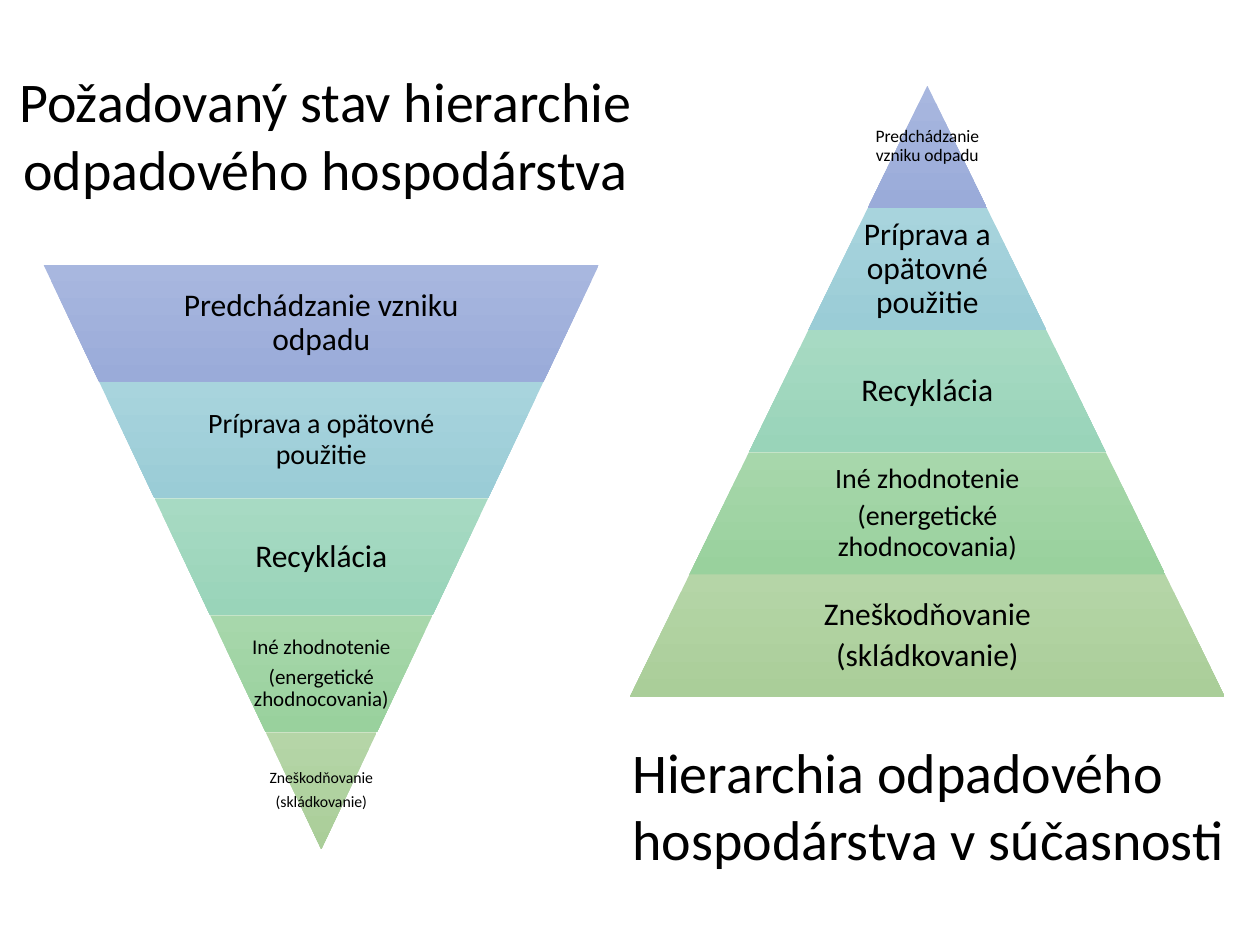
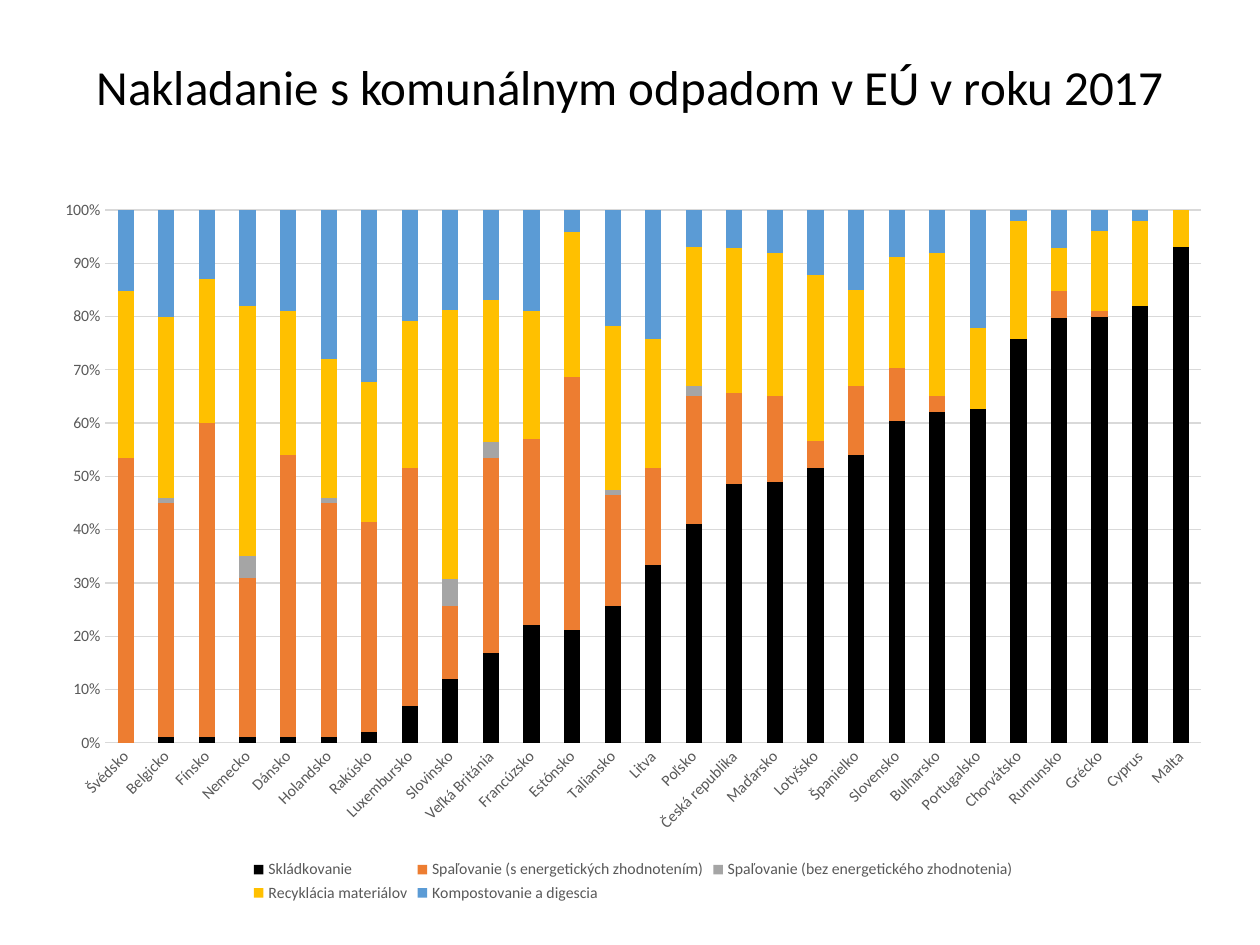
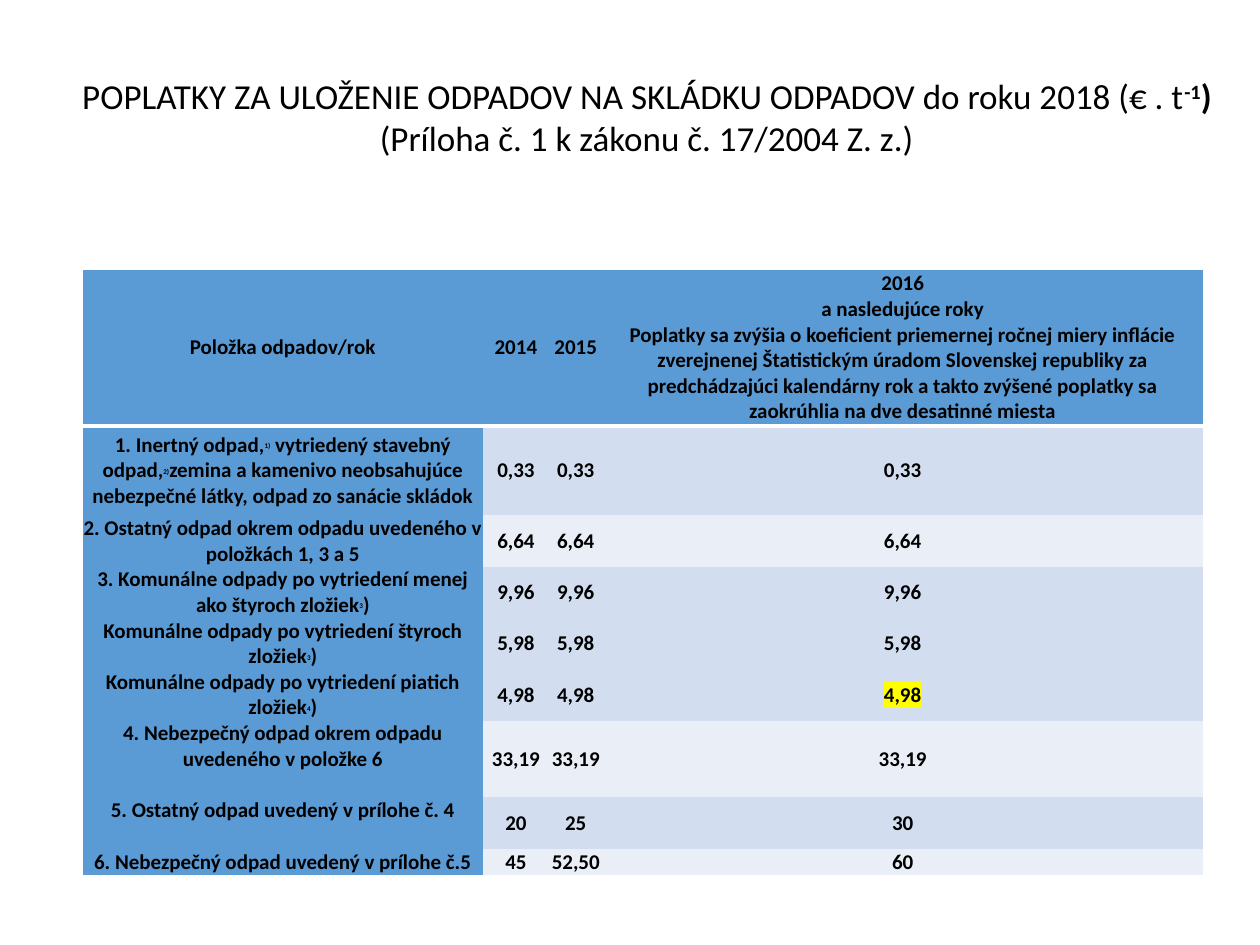
from lxml import etree
from pptx import Presentation
from pptx.chart.data import CategoryChartData
from pptx.dml.color import RGBColor
from pptx.enum.chart import XL_CHART_TYPE as CT, XL_LEGEND_POSITION as LP, XL_TICK_MARK as TM
from pptx.enum.text import MSO_ANCHOR as MA, MSO_AUTO_SIZE as AS, PP_ALIGN as PA
from pptx.oxml.ns import qn
from pptx.util import Inches, Pt

FONT = "Calibri"
BLACK, WHITE, GREY, GRID, BLUE = "000000", "FFFFFF", "595959", "D9D9D9", "5B9BD5"
ROW_FILLS = ["D2DEEF", "EAEFF7"]
NO_GRID_STYLE = "{2D5ABB26-0587-4C30-8999-92F81FD0307C}"

LEVELS = [
    ("Predchádzanie vzniku odpadu", "A8B7DF", "9AABD9"),
    ("Príprava a opätovné použitie", "A8D4DD", "9ACCD6"),
    ("Recyklácia", "A7DAC3", "99D4B9"),
    ("Iné zhodnotenie\n(energetické zhodnocovania)", "A7D7AB", "99D19D"),
    ("Zneškodňovanie\n(skládkovanie)", "B5D5A7", "AACE99"),
]

COUNTRIES = [
    "Švédsko", "Belgicko", "Fínsko", "Nemecko", "Dánsko", "Holandsko", "Rakúsko",
    "Luxembursko", "Slovinsko", "Veľká Británia", "Francúzsko", "Estónsko", "Taliansko",
    "Litva", "Poľsko", "Česká republika", "Maďarsko", "Lotyšsko", "Španielko", "Slovensko",
    "Bulharsko", "Portugalsko", "Chorvátsko", "Rumunsko", "Grécko", "Cyprus", "Malta",
]
TREATMENTS = [
    ("Skládkovanie", BLACK,
     [0, 1, 1, 1, 1, 1, 2, 7, 12, 17, 22, 21, 26, 33, 41, 48, 49, 51, 54, 61, 62, 62, 75, 79,
      80, 82, 93]),
    ("Spaľovanie (s energetických zhodnotením)", "ED7D31",
     [53, 44, 59, 30, 53, 44, 39, 45, 14, 37, 35, 47, 21, 18, 24, 17, 16, 5, 13, 10, 3, 0, 0,
      5, 1, 0, 0]),
    ("Spaľovanie (bez energetického zhodnotenia)", "A5A5A5",
     [0, 1, 0, 4, 0, 1, 0, 0, 5, 3, 0, 0, 1, 0, 2, 0, 0, 0, 0, 0, 0, 0, 0, 0, 0, 0, 0]),
    ("Recyklácia materiálov", "FFC000",
     [31, 34, 27, 47, 27, 26, 26, 28, 51, 27, 24, 27, 31, 24, 26, 27, 27, 31, 18, 21, 27, 15,
      22, 8, 15, 16, 7]),
    ("Kompostovanie a digescia", BLUE,
     [15, 20, 13, 18, 19, 28, 32, 21, 19, 17, 19, 4, 22, 24, 7, 7, 8, 12, 15, 9, 8, 22, 2, 7,
      4, 2, 0]),
]

COL_WIDTHS = [3.17, 0.53, 0.42, 4.77]
ROW_HEIGHTS = [1.24, 0.71, 0.41, 1.22, 0.61, 0.41, 0.2]
FEES = [
    ("Položka odpadov/rok", "2014", "2015",
     "2016\na nasledujúce roky\nPoplatky sa zvýšia o koeficient priemernej ročnej miery "
     "inflácie zverejnenej Štatistickým úradom Slovenskej republiky za predchádzajúci "
     "kalendárny rok a takto zvýšené poplatky sa zaokrúhlia na dve desatinné miesta"),
    ("1. Inertný odpad,^1)^ vytriedený stavebný odpad,^2)^zemina a kamenivo neobsahujúce "
     "nebezpečné látky, odpad zo sanácie skládok", "0,33", "0,33", "0,33"),
    ("2. Ostatný odpad okrem odpadu uvedeného v položkách 1, 3 a 5", "6,64", "6,64", "6,64"),
    ("3. Komunálne odpady po vytriedení menej ako štyroch zložiek^3^)\n"
     "Komunálne odpady po vytriedení štyroch zložiek^3^)\n"
     "Komunálne odpady po vytriedení piatich zložiek^4^)",
     *["9,96\n5,98\n4,98"] * 3),
    ("4. Nebezpečný odpad okrem odpadu uvedeného v položke 6", "33,19", "33,19", "33,19"),
    ("5. Ostatný odpad uvedený v prílohe č. 4", "20", "25", "30"),
    ("6. Nebezpečný odpad uvedený v prílohe č.5", "45", "52,50", "60"),
]
TOP_ALIGNED_ROWS = (4, 5)


def rgb(color):
    """Return the colour for a hex string."""
    return RGBColor.from_string(color)


def set_font(font, size, color=BLACK, bold=False):
    """Format a font."""
    font.name, font.size, font.bold = FONT, Pt(size), bold
    font.color.rgb = rgb(color)


def add_run(p, text, size, color=BLACK, bold=False, raised=False):
    """Add a formatted run to a paragraph."""
    r = p.add_run()
    r.text = text
    set_font(r.font, size, color, bold)
    if raised:
        r.font._element.set("baseline", "30000")
    return r


def write(tf, text, size, align=PA.CENTER, bold=False, raised_size=7, spacing=None,
          before=0, after=0):
    """Write lines as paragraphs, raising the parts between carets."""
    tf.word_wrap = True
    for i, line in enumerate(text.split("\n")):
        p = tf.add_paragraph() if i else tf.paragraphs[0]
        p.alignment, p.line_spacing = align, spacing
        p.space_before, p.space_after = Pt(before if i else 0), Pt(after)
        for j, part in enumerate(line.split("^")):
            raised = j % 2 == 1
            add_run(p, part, raised_size if raised else size, bold=bold, raised=raised)


def set_margins(obj, x, y):
    """Set the side and the top and bottom margins of a frame or cell."""
    obj.margin_left = obj.margin_right = Inches(x)
    obj.margin_top = obj.margin_bottom = Inches(y)


def add_slide(prs, title, box, size):
    """Add a title-only slide with its title placed and formatted."""
    s = prs.slides.add_slide(prs.slide_layouts[5])
    sp = s.shapes.title
    sp.left, sp.top, sp.width, sp.height = map(Inches, box)
    tf = sp.text_frame
    tf.auto_size, tf.vertical_anchor = AS.NONE, MA.MIDDLE
    write(tf, title, size)
    return s


def add_band(s, center, top, height, top_width, bottom_width, level, size):
    """Add one trapezoid band of a pyramid with its text."""
    text, light, dark = level
    points = [(center + dx, y) for dx, y in (
        (top_width / 2, top), (bottom_width / 2, top + height),
        (-bottom_width / 2, top + height), (-top_width / 2, top))]
    corners = [(Inches(x), Inches(y)) for x, y in points]
    builder = s.shapes.build_freeform(*corners[0])
    builder.add_line_segments(corners[1:], close=True)
    sp = builder.convert_to_shape()
    sp.shadow.inherit = False
    sp.line.fill.background()
    sp.fill.gradient()
    sp.fill.gradient_angle = 270
    for stop, color in zip(sp.fill.gradient_stops, (light, dark)):
        stop.color.rgb = rgb(color)
    tf = sp.text_frame
    tf.vertical_anchor = MA.MIDDLE
    is_tip = min(top_width, bottom_width) == 0
    set_margins(tf, 0.01 if is_tip else 0.01 + 0.175 * max(top_width, bottom_width), 0.01)
    write(tf, text, size, spacing=0.9, after=4)


def add_pyramid(s, center, top, width, height, sizes, inverted=False):
    """Stack the hierarchy levels into a pyramid."""
    n = len(LEVELS)
    edges = [width * i / n for i in range(n + 1)]
    if inverted:
        edges.reverse()
    for i, (level, size) in enumerate(zip(LEVELS, sizes)):
        add_band(s, center, top + i * height / n, height / n, edges[i], edges[i + 1],
                 level, size)


def add_textbox(s, text, box, size):
    """Add a left-aligned text box."""
    tf = s.shapes.add_textbox(*map(Inches, box)).text_frame
    write(tf, text, size, align=PA.LEFT)
    tf.auto_size = AS.SHAPE_TO_FIT_TEXT


def add_treatment_chart(s, box):
    """Add the 100% stacked column chart of waste treatment."""
    data = CategoryChartData(number_format="#,##0")
    data.categories = COUNTRIES
    for name, _, values in TREATMENTS:
        data.add_series(name, values)
    chart = s.shapes.add_chart(CT.COLUMN_STACKED_100, *map(Inches, box), data).chart
    set_font(chart.font, 10)
    chart.has_title = False
    chart.has_legend = True
    chart.legend.position, chart.legend.include_in_layout = LP.BOTTOM, False
    set_font(chart.legend.font, 9, GREY)
    plot = chart.plots[0]
    plot.gap_width, plot.overlap, plot.vary_by_categories = 150, 100, False
    for series, (_, color, _) in zip(plot.series, TREATMENTS):
        series.format.fill.solid()
        series.format.fill.fore_color.rgb = rgb(color)
    cat, val = chart.category_axis, chart.value_axis
    for axis in (cat, val):
        axis.major_tick_mark = axis.minor_tick_mark = TM.NONE
        set_font(axis.tick_labels.font, 9, GREY)
    for line in (cat.format.line, val.major_gridlines.format.line):
        line.color.rgb, line.width = rgb(GRID), Pt(0.75)
    val.format.line.fill.background()
    val.tick_labels.number_format = "0%"
    val.tick_labels.number_format_is_linked = False
    cat._element.find(qn("c:txPr")).find(qn("a:bodyPr")).set("rot", "-2700000")


def add_bottom_border(cell, color, width):
    """Draw a line along the bottom of a cell."""
    ln = etree.Element(qn("a:lnB"), w=str(Pt(width)))
    fill = etree.SubElement(ln, qn("a:solidFill"))
    etree.SubElement(fill, qn("a:srgbClr"), val=color)
    cell._tc.get_or_add_tcPr().insert(0, ln)


def highlight(r, color):
    """Mark a run with a highlight colour."""
    mark = etree.Element(qn("a:highlight"))
    etree.SubElement(mark, qn("a:srgbClr"), val=color)
    r.font._element.find(qn("a:solidFill")).addnext(mark)


def add_fee_table(s, left, top):
    """Add the table of landfill fees."""
    frame = s.shapes.add_table(len(FEES), len(COL_WIDTHS), Inches(left), Inches(top),
                               Inches(sum(COL_WIDTHS)), Inches(sum(ROW_HEIGHTS)))
    table = frame.table
    table._tbl.tblPr.find(qn("a:tableStyleId")).text = NO_GRID_STYLE
    for col, width in zip(table.columns, COL_WIDTHS):
        col.width = Inches(width)
    for i, (row, height) in enumerate(zip(table.rows, ROW_HEIGHTS)):
        row.height = Inches(height)
        for j, cell in enumerate(row.cells):
            is_header = i == 0 or j == 0
            set_margins(cell, 0, 0)
            cell.vertical_anchor = MA.TOP if j == 0 and i in TOP_ALIGNED_ROWS else MA.MIDDLE
            cell.fill.solid()
            cell.fill.fore_color.rgb = rgb(BLUE if is_header else ROW_FILLS[(i - 1) % 2])
            write(cell.text_frame, FEES[i][j], 12, bold=True, before=0 if is_header else 14.65)
            if i == 0:
                add_bottom_border(cell, WHITE, 3)
    highlight(table.cell(3, 3).text_frame.paragraphs[2].runs[0], "FFFF00")


def main():
    """Build the presentation."""
    prs = Presentation()
    prs.slide_width, prs.slide_height = Inches(10), Inches(7.5)

    s = add_slide(prs, "Požadovaný stav hierarchie odpadového hospodárstva",
                  (0.01, 0.44, 5.15, 1.25), 32)
    add_pyramid(s, 2.55, 2.1, 4.41, 4.64, [18, 16, 18, 12, 9], inverted=True)
    add_pyramid(s, 7.36, 0.68, 4.72, 4.85, [10, 18, 18, 16, 18])
    add_textbox(s, "Hierarchia odpadového hospodárstva v súčasnosti",
                (4.92, 5.8, 5.04, 1.18), 32)

    s = add_slide(prs, "Nakladanie s komunálnym odpadom v EÚ v roku 2017",
                  (0.5, 0.3, 9, 0.77), 28)
    add_treatment_chart(s, (0.33, 1.48, 9.39, 5.72))

    s = add_slide(prs, "POPLATKY ZA ULOŽENIE ODPADOV NA SKLÁDKU ODPADOV do roku 2018 (€ . t",
                  (0.5, 0.3, 9.27, 1.25), 20)
    p = s.shapes.title.text_frame.paragraphs[0]
    add_run(p, "-1", 20, bold=True, raised=True)
    add_run(p, ")", 20, bold=True)
    p.add_line_break()
    add_run(p, "(Príloha č. 1 k zákonu č. 17/2004 Z. z.)", 20)
    add_fee_table(s, 0.66, 2.14)

    prs.save("out.pptx")


if __name__ == "__main__":
    main()
